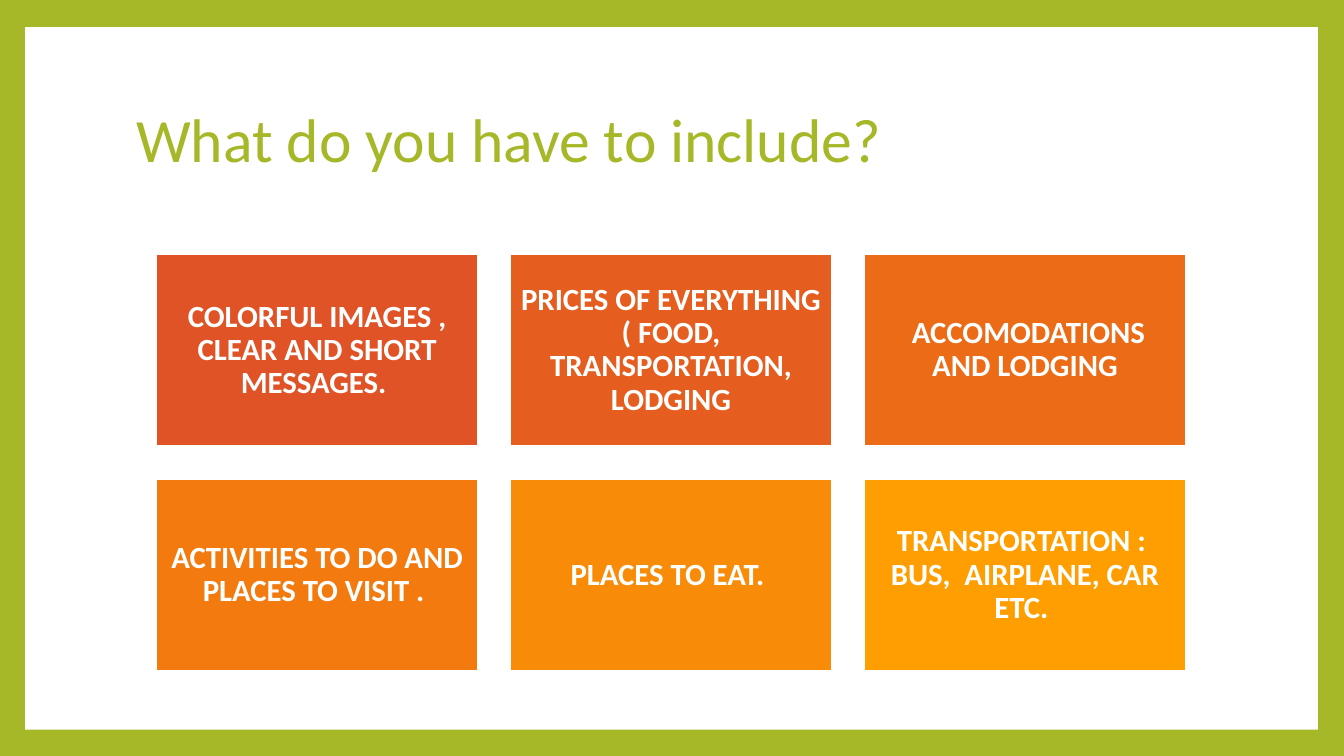
from dataclasses import dataclass

from pptx import Presentation
from pptx.dml.color import RGBColor
from pptx.enum.shapes import MSO_SHAPE
from pptx.enum.text import MSO_ANCHOR, PP_ALIGN
from pptx.util import Inches, Pt

TITLE = "What do you have to include?"
TILES = [
    ("COLORFUL IMAGES , CLEAR AND SHORT MESSAGES. ", "DF5327"),
    ("PRICES OF EVERYTHING ( FOOD, TRANSPORTATION, LODGING", "E55E1F"),
    (" ACCOMODATIONS AND LODGING", "EC6B17"),
    ("ACTIVITIES TO DO AND PLACES TO VISIT . ", "F27A0F"),
    ("PLACES TO EAT. ", "F88B07"),
    ("TRANSPORTATION :  BUS,  AIRPLANE, CAR ETC. ", "FE9E00"),
]


@dataclass(frozen=True)
class Theme:
    font: str = "Calibri"
    green: str = "A6B727"
    white: str = "FFFFFF"
    title: int = 44
    tile: int = 22
    line: float = 1.5


theme = Theme()
COLS = 3
LEFT, TOP = 1.55, 2.52
WIDTH, HEIGHT = 3.19, 1.91
GAP = 0.32
INSET = 0.09


def paint(fill, color):
    fill.solid()
    fill.fore_color.rgb = RGBColor.from_string(color)


def add_box(slide, left, top, width, height, color):
    box = slide.shapes.add_shape(
        MSO_SHAPE.RECTANGLE, *map(Inches, (left, top, width, height)))
    box.shadow.inherit = False
    paint(box.fill, color)
    return box


def write(shape, text, size, color, align, bold=False):
    frame = shape.text_frame
    frame.text = text
    frame.word_wrap = True
    frame.vertical_anchor = MSO_ANCHOR.MIDDLE
    para = frame.paragraphs[0]
    para.alignment = align
    para.line_spacing = 0.9
    font = para.runs[0].font
    font.name, font.size, font.bold = theme.font, Pt(size), bold
    font.color.rgb = RGBColor.from_string(color)


def add_tile(slide, index, text, color):
    row, col = divmod(index, COLS)
    tile = add_box(slide, LEFT + col * (WIDTH + GAP), TOP + row * (HEIGHT + GAP),
                   WIDTH, HEIGHT, color)
    paint(tile.line.fill, theme.white)
    tile.line.width = Pt(theme.line)
    frame = tile.text_frame
    frame.margin_left = frame.margin_right = Inches(INSET)
    frame.margin_top = frame.margin_bottom = Inches(INSET)
    write(tile, text, theme.tile, theme.white, PP_ALIGN.CENTER, bold=True)


def main():
    deck = Presentation()
    deck.slide_width, deck.slide_height = Inches(13.33), Inches(7.5)
    slide = deck.slides.add_slide(deck.slide_layouts[5])
    paint(slide.background.fill, theme.green)

    title = slide.shapes.title
    title.left, title.top = Inches(1.25), Inches(0.67)
    title.width, title.height = Inches(10.8), Inches(1.48)
    write(title, TITLE, theme.title, theme.green, PP_ALIGN.LEFT)

    panel = add_box(slide, 0.25, 0.27, 12.82, 6.97, theme.white)
    panel.line.fill.background()
    title.element.addprevious(panel.element)  # panel goes behind the title

    for index, (text, color) in enumerate(TILES):
        add_tile(slide, index, text, color)
    deck.save("out.pptx")


if __name__ == "__main__":
    main()
